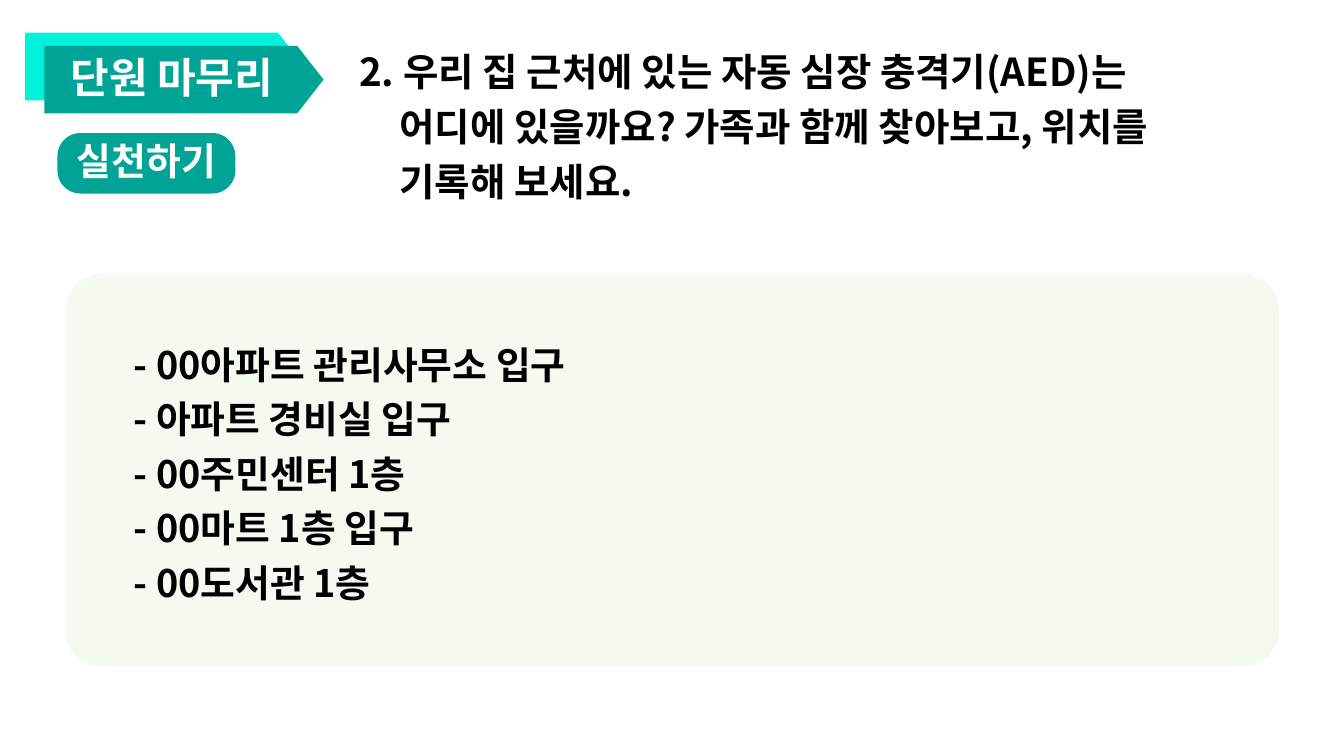
from dataclasses import dataclass

from lxml.etree import SubElement
from pptx import Presentation
from pptx.dml.color import RGBColor as Rgb
from pptx.enum.shapes import MSO_SHAPE as Preset
from pptx.enum.text import MSO_ANCHOR as Anchor, MSO_AUTO_SIZE as AutoSize, PP_ALIGN as Align
from pptx.oxml.ns import qn
from pptx.util import Pt

PX = 9144


@dataclass(frozen=True)
class Theme:
    font: str = "Noto Sans CJK KR"
    ink: Rgb = Rgb(0, 0, 0)
    white: Rgb = Rgb(255, 255, 255)
    teal: Rgb = Rgb.from_string("00A396")
    ribbon: Rgb = Rgb.from_string("00A496")
    aqua: Rgb = Rgb.from_string("00F2DB")
    mint: Rgb = Rgb.from_string("F5FAF0")
    unit_size: int = 60
    question_size: int = 55
    body_size: int = 54


theme = Theme()


def add_block(preset, box, adjustment, color):
    block = slide.shapes.add_shape(preset, *(n * PX for n in box))
    block.adjustments[0] = adjustment
    block.shadow.inherit = False
    block.fill.solid()
    block.fill.fore_color.rgb = color
    block.line.fill.background()
    return block


def write(holder, lines, size, color, spacing, align=Align.LEFT, hanging=0):
    frame = holder.text_frame
    frame.word_wrap = True
    frame.text = "\n".join(lines)
    for index, paragraph in enumerate(frame.paragraphs):
        paragraph.alignment = align
        paragraph.line_spacing = spacing
        paragraph.space_before = Pt(0)
        properties = paragraph._p.get_or_add_pPr()
        properties.set("marL", str(hanging * PX if index else 0))
        properties.set("indent", "0")
        SubElement(properties, qn("a:buNone"))
        font = paragraph.font
        font.name = theme.font
        font.size = Pt(size)
        font.bold = True
        font.color.rgb = color
        SubElement(font._rPr, qn("a:ea"), typeface=theme.font)


deck = Presentation()
deck.slide_width, deck.slide_height = 2667 * PX, 1500 * PX
slide = deck.slides.add_slide(deck.slide_layouts[1])
question, places = slide.placeholders

activity = add_block(Preset.ROUNDED_RECTANGLE, (114, 264, 353, 120), 0.38, theme.teal)
write(activity, ["실천하기"], theme.body_size, theme.white, 0.9, Align.CENTER)

add_block(Preset.PENTAGON, (50, 65, 554, 134), 0.39, theme.aqua)
unit = add_block(Preset.PENTAGON, (88, 91, 554, 134), 0.39, theme.ribbon)
write(unit, ["단원 마무리"], theme.unit_size, theme.white, 0.9)
unit.text_frame.margin_left = 52 * PX
unit.text_frame.margin_right = 0

answer_panel = add_block(Preset.ROUNDED_RECTANGLE, (130, 544, 2408, 778), 0.09, theme.mint)
answer_panel.element.addnext(places.element)

write(question, [
    "2. 우리 집 근처에 있는 자동 심장 충격기(AED)는",
    "어디에 있을까요? 가족과 함께 찾아보고, 위치를",
    "기록해 보세요.",
], theme.question_size, theme.ink, 1.2, hanging=80)

write(places, [
    "- 00아파트 관리사무소 입구",
    "- 아파트 경비실 입구",
    "- 00주민센터 1층",
    "- 00마트 1층 입구",
    "- 00도서관 1층",
], theme.body_size, theme.ink, 1.2)

for holder, box in ((question, (703, 71, 1726, 343)), (places, (255, 655, 1053, 555))):
    holder.left, holder.top, holder.width, holder.height = (n * PX for n in box)
    holder.text_frame.vertical_anchor = Anchor.TOP
    holder.text_frame.auto_size = AutoSize.SHAPE_TO_FIT_TEXT

deck.save("out.pptx")
